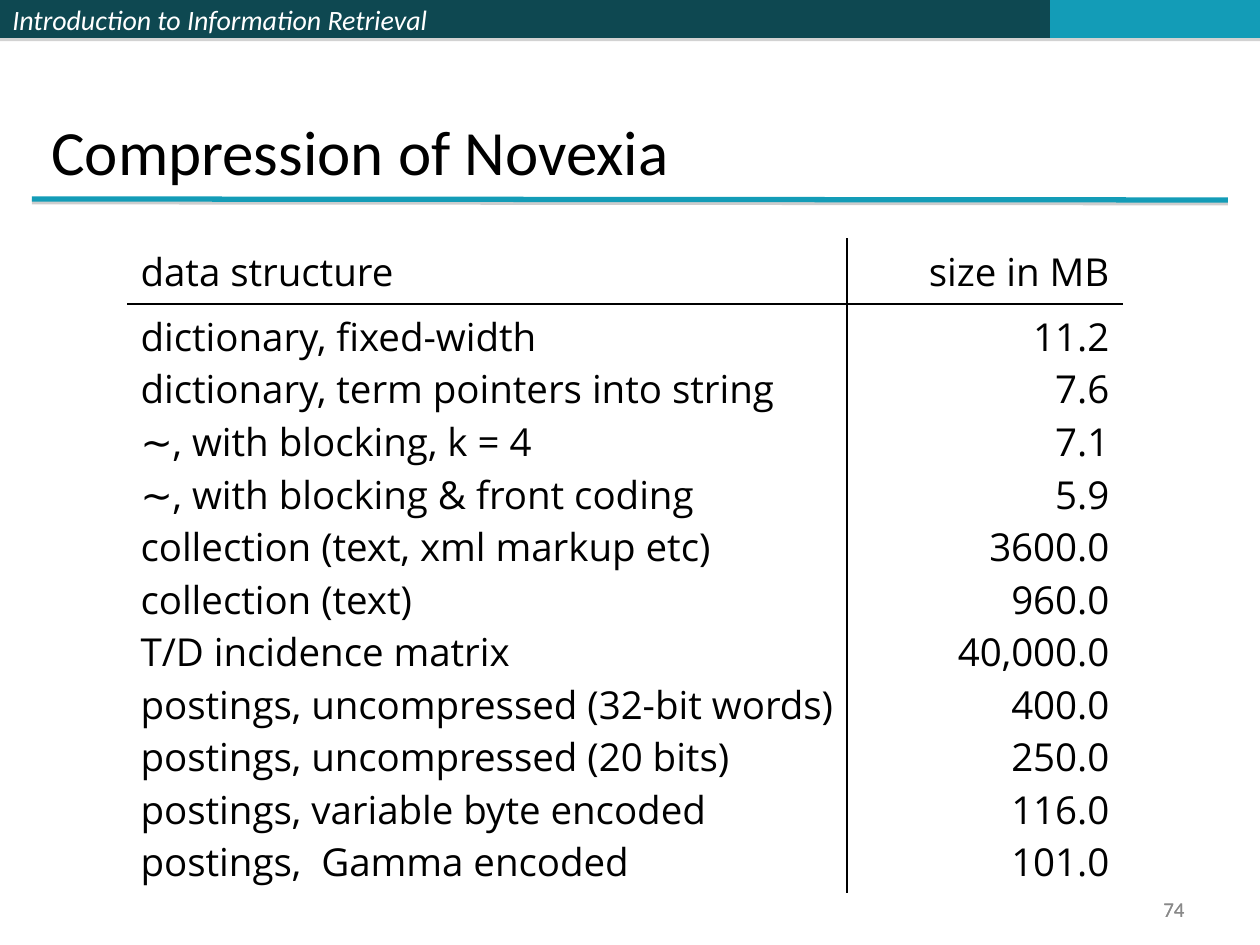
import pptx
import pptx.util
import pptx.dml.color
import pptx.enum.shapes
import pptx.enum.text
import pptx.oxml
import pptx.oxml.ns

RGB = pptx.dml.color.RGBColor
DARK = RGB(0x0E, 0x48, 0x51)
TEAL = RGB(0x13, 0x9C, 0xB7)
GREY = RGB(0x89, 0x89, 0x89)
BLACK = RGB(0, 0, 0)
WHITE = RGB(0xFF, 0xFF, 0xFF)
SHADE = RGB(0x80, 0x80, 0x80)
PX = 914400 / 126
NS = pptx.oxml.ns.nsdecls("a")
ALIGN = pptx.enum.text.PP_ALIGN
ANCHOR = pptx.enum.text.MSO_ANCHOR


def write(frame, lines, size, name, color, align=ALIGN.LEFT, italic=False):
    look = {"size": pptx.util.Pt(size), "name": name, "italic": italic}
    for i, line in enumerate(lines):
        para = frame.paragraphs[0] if i == 0 else frame.add_paragraph()
        para.alignment = align
        run = para.add_run()
        run.text = line
        for key, val in look.items():
            setattr(run.font, key, val)
        run.font.color.rgb = color


def shadow(shape, alpha, dist):
    shape._element.spPr.append(pptx.oxml.parse_xml(
        f'<a:effectLst {NS}><a:outerShdw dist="{pptx.util.Pt(dist)}" dir="5400000">'
        f'<a:srgbClr val="{SHADE}"><a:alpha val="{alpha * 1000}"/></a:srgbClr>'
        '</a:outerShdw></a:effectLst>'))


deck = pptx.Presentation()
deck.slide_width, deck.slide_height = round(1260 * PX), round(945 * PX)
slide = deck.slides.add_slide(deck.slide_layouts[6])
shapes = slide.shapes

# Top band
bars = [(0, 514, DARK, "Introduction to Information Retrieval"),
        (514, 536, DARK, ""), (1050, 210, TEAL, "")]
for left, width, color, text in bars:
    bar = shapes.add_shape(pptx.enum.shapes.MSO_SHAPE.RECTANGLE,
                           round(left * PX), 0, round(width * PX), round(38 * PX))
    bar.fill.solid()
    bar.fill.fore_color.rgb = color
    bar.line.fill.background()
    shadow(bar, 35, 1.8)
    if text:
        bar.text_frame.vertical_anchor = ANCHOR.MIDDLE
        write(bar.text_frame, [text], 16, "Calibri", WHITE, italic=True)

# Rule under the title
rule = shapes.add_connector(pptx.enum.shapes.MSO_CONNECTOR.STRAIGHT,
                            round(32 * PX), round(199 * PX),
                            round(1228 * PX), round(200 * PX))
rule.line.color.rgb = TEAL
rule.line.width = pptx.util.Pt(3)
shadow(rule, 38, 1.6)

# Title and page number, which is set twice
boxes = [((903, 892, 294, 34), "74", 12, GREY, ALIGN.RIGHT, ANCHOR.MIDDLE),
         ((39, 1, 1191, 193), "Compression of Novexia", 36, BLACK, ALIGN.LEFT, ANCHOR.BOTTOM),
         ((903, 890, 294, 38), "74", 12, GREY, ALIGN.RIGHT, ANCHOR.MIDDLE)]
for place, text, size, color, align, anchor in boxes:
    frame = shapes.add_textbox(*[round(n * PX) for n in place]).text_frame
    frame.word_wrap = True
    frame.vertical_anchor = anchor
    write(frame, [text], size, "Calibri", color, align)

# Table: a header row, then one row that holds all the lines
data = [("dictionary, fixed-width", "11.2"),
        ("dictionary, term pointers into string", "7.6"),
        ("∼, with blocking, k = 4", "7.1"),
        ("∼, with blocking & front coding", "5.9"),
        ("collection (text, xml markup etc)", "3600.0"),
        ("collection (text)", "960.0"),
        ("T/D incidence matrix", "40,000.0"),
        ("postings, uncompressed (32-bit words)", "400.0"),
        ("postings, uncompressed (20 bits)", "250.0"),
        ("postings, variable byte encoded", "116.0"),
        ("postings,  Gamma encoded", "101.0")]
rows = [[("data structure", "size in MB")], data]
table = shapes.add_table(2, 2, round(128 * PX), round(239 * PX),
                         round(994 * PX), round(655 * PX)).table
table.first_row = table.horz_banding = False
for col, width in zip(table.columns, (719, 275)):
    col.width = round(width * PX)
for row, height in zip(table.rows, (65, 590)):
    row.height = round(height * PX)

for r, group in enumerate(rows):
    for c, lines in enumerate(zip(*group)):
        cell = table.cell(r, c)
        write(cell.text_frame, lines, 22, "Open Sans", BLACK,
              ALIGN.RIGHT if c else ALIGN.LEFT)
        if r:
            cell.fill.solid()
            cell.fill.fore_color.rgb = WHITE
        else:
            cell.fill.background()
        # Black lines inside, white ones above and below
        edges = [("lnL" if c else "lnR", BLACK, 0.75),
                 ("lnT", *((BLACK, 0.75) if r else (WHITE, 1))),
                 ("lnB", *((WHITE, 1) if r else (BLACK, 0.75)))]
        for i, (tag, color, width) in enumerate(edges):
            cell._tc.get_or_add_tcPr().insert(i, pptx.oxml.parse_xml(
                f'<a:{tag} {NS} w="{pptx.util.Pt(width)}"><a:solidFill>'
                f'<a:srgbClr val="{color}"/></a:solidFill></a:{tag}>'))

deck.save("out.pptx")
